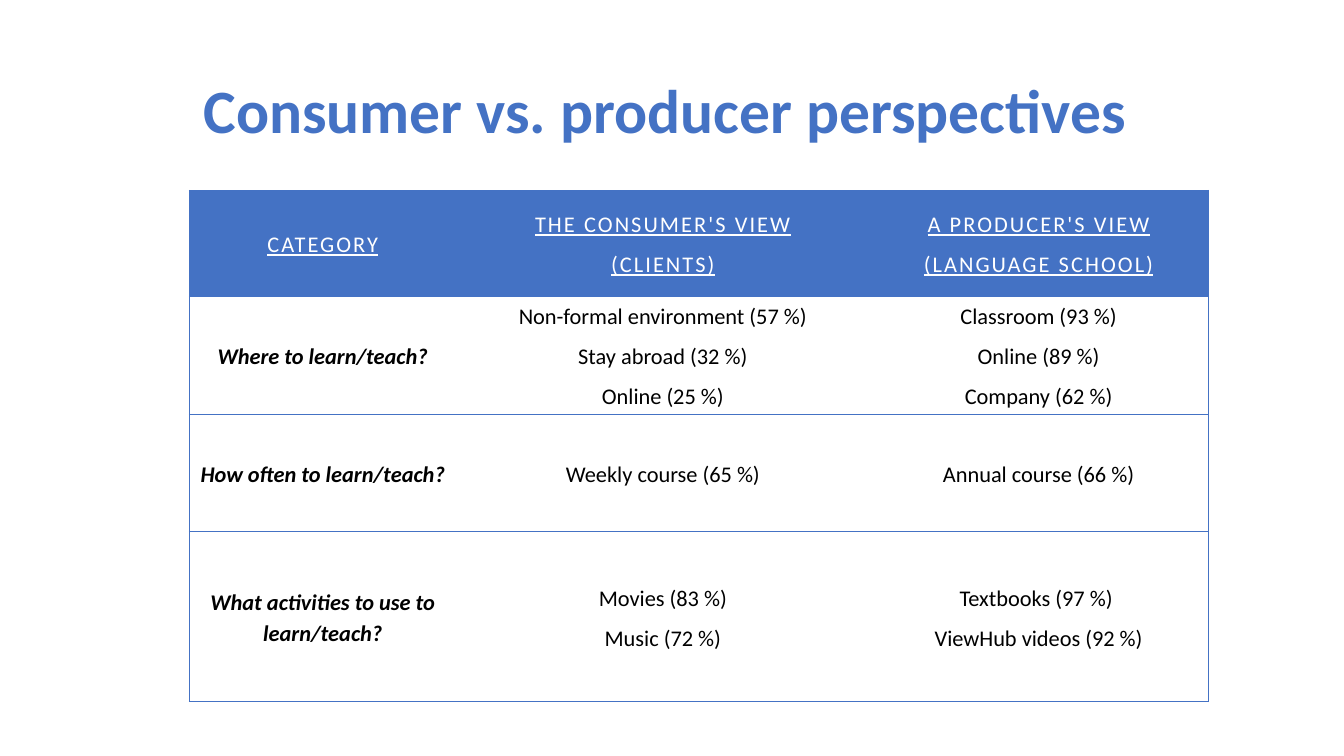
import dataclasses

import pptx
import pptx.dml.color
import pptx.enum.text
import pptx.oxml
import pptx.oxml.ns
import pptx.util
from pptx.util import Cm, Pt


@dataclasses.dataclass(frozen=True)
class Theme:
    font: str = "Calibri"
    accent: str = "4472C4"
    header_text: str = "FFFFFF"
    body_text: str = "000000"
    title_size: int = 44
    table_size: int = 16
    border_width: float = 0.5
    header_tracking: float = 1.5


THEME = Theme()

TITLE_BOX = (Cm(2.34), Cm(1.02), Cm(29.21), Cm(3.68))
TABLE_BOX = (Cm(4.77), Cm(4.79), Cm(25.67), Cm(12.88))
COLUMN_WIDTHS = (6.73, 10.41, 8.53)
ROW_HEIGHTS = (2.67, 2.97, 2.97, 4.27)

# Each row holds one text per column; a line break starts a new paragraph.
ROWS = (
    ("CATEGORY", "THE CONSUMER'S VIEW\n(CLIENTS)", "A PRODUCER'S VIEW\n(LANGUAGE SCHOOL)"),
    (
        "Where to learn/teach?",
        "Non-formal environment (57 %)\nStay abroad (32 %)\nOnline (25 %)",
        "Classroom (93 %)\nOnline (89 %)\nCompany (62 %)",
    ),
    ("How often to learn/teach?", "Weekly course (65 %)", "Annual course (66 %)"),
    (
        "What activities to use to learn/teach?",
        "Movies (83 %)\nMusic (72 %)",
        "Textbooks (97 %) \nViewHub videos (92 %)",
    ),
)


def format_paragraph(paragraph, size, color, line_spacing, bold=False):
    paragraph.alignment = pptx.enum.text.PP_ALIGN.CENTER
    paragraph.line_spacing = line_spacing
    font = paragraph.font
    font.name = THEME.font
    font.size = Pt(size)
    font.bold = bold
    font.color.rgb = pptx.dml.color.RGBColor.from_string(color)


def add_title(slide, box, text):
    title = slide.shapes.title
    title.left, title.top, title.width, title.height = box
    frame = title.text_frame
    frame.text = text
    frame.word_wrap = True
    frame.vertical_anchor = pptx.enum.text.MSO_ANCHOR.MIDDLE
    format_paragraph(frame.paragraphs[0], THEME.title_size, THEME.accent, 0.9, bold=True)


def set_borders(cell, visible_sides):
    """Draw the given sides (letters of LRTB) and hide the others."""
    properties = cell._tc.get_or_add_tcPr()
    for position, side in enumerate("LRTB"):
        paint = "<a:noFill/>"
        if side in visible_sides:
            paint = f'<a:solidFill><a:srgbClr val="{THEME.accent}"/></a:solidFill>'
        line = pptx.oxml.parse_xml(
            f'<a:ln{side} {pptx.oxml.ns.nsdecls("a")} w="{Pt(THEME.border_width)}">{paint}</a:ln{side}>'
        )
        properties.insert(position, line)


def fill_cell(cell, text, is_header, is_category):
    cell.vertical_anchor = pptx.enum.text.MSO_ANCHOR.MIDDLE
    cell.margin_left = cell.margin_right = Cm(0.25 if is_header else 0.19)
    cell.margin_top = cell.margin_bottom = Cm(0.25 if is_header else 0)
    if is_header:
        cell.fill.solid()
        cell.fill.fore_color.rgb = pptx.dml.color.RGBColor.from_string(THEME.accent)
    else:
        cell.fill.background()

    cell.text_frame.text = text
    color = THEME.header_text if is_header else THEME.body_text
    emphasized = is_category and not is_header
    for paragraph in cell.text_frame.paragraphs:
        format_paragraph(paragraph, THEME.table_size, color, 1.15, bold=emphasized)
        paragraph.space_after = Pt(6)
        paragraph.font.italic = emphasized
        paragraph.font.underline = is_header
        if is_header:
            tracking = str(int(THEME.header_tracking * 100))
            paragraph.runs[0]._r.get_or_add_rPr().set("spc", tracking)


def add_comparison_table(slide, box, rows):
    table = slide.shapes.add_table(len(rows), len(COLUMN_WIDTHS), *box).table
    table.horz_banding = False
    for column, width in zip(table.columns, COLUMN_WIDTHS):
        column.width = Cm(width)
    for row, height in zip(table.rows, ROW_HEIGHTS):
        row.height = Cm(height)

    last_column = len(COLUMN_WIDTHS) - 1
    for row_index, texts in enumerate(rows):
        for column_index, text in enumerate(texts):
            cell = table.cell(row_index, column_index)
            fill_cell(cell, text, row_index == 0, column_index == 0)
            outer_side = {0: "L", last_column: "R"}.get(column_index, "")
            set_borders(cell, "TB" + outer_side)


def main():
    presentation = pptx.Presentation()
    presentation.slide_width = Cm(33.87)
    presentation.slide_height = Cm(19.05)
    title_only = presentation.slide_layouts.get_by_name("Title Only")
    slide = presentation.slides.add_slide(title_only)
    add_title(slide, TITLE_BOX, "Consumer vs. producer perspectives ")
    add_comparison_table(slide, TABLE_BOX, ROWS)
    presentation.save("out.pptx")


if __name__ == "__main__":
    main()
